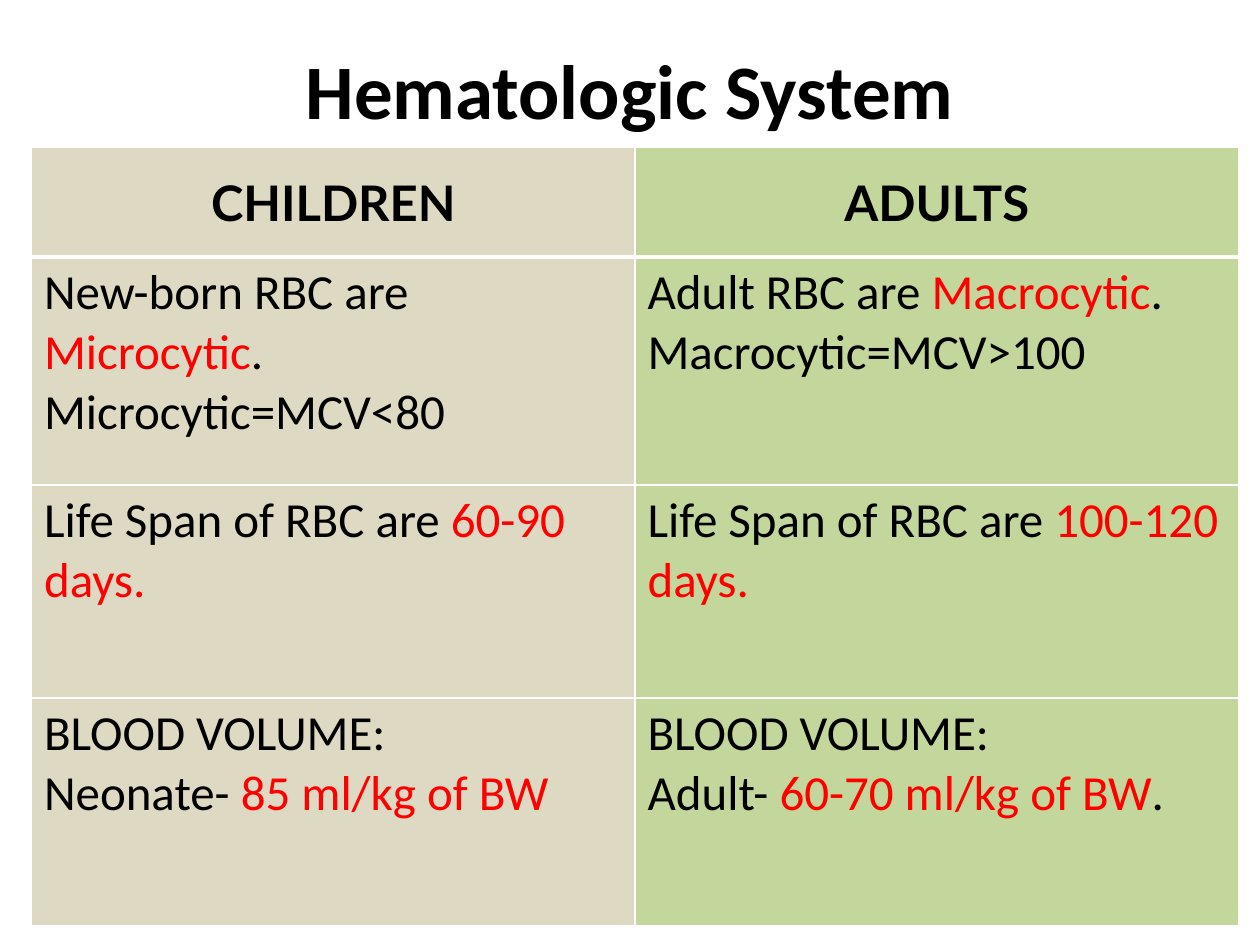
from lxml.etree import SubElement
from pptx import Presentation
from pptx.dml.color import RGBColor
from pptx.enum.text import MSO_ANCHOR as ANCHOR, PP_ALIGN as ALIGN
from pptx.oxml.ns import qn
from pptx.util import Inches, Pt

BLACK, RED, WHITE = "000000", "FF0000", "FFFFFF"
COLUMN_FILLS = ["DDD9C3", "C3D69B"]
TITLE = {"name": "Calibri", "size": Pt(44), "bold": True}
HEADER = {"name": "Lato", "size": Pt(28), "bold": True}
BODY = {"name": "Calibri", "size": Pt(28), "bold": False}


def rgb(value):
    return RGBColor.from_string(value)


def add_runs(p, runs, fmt):
    for text, color in runs:
        r = p.add_run()
        r.text = text
        for key, value in fmt.items():
            setattr(r.font, key, value)
        r.font.color.rgb = rgb(color)


prs = Presentation()
prs.slide_width, prs.slide_height = Inches(10), Inches(7.5)
s = prs.slides.add_slide(prs.slide_layouts[6])

# Title
tf = s.shapes.add_textbox(Inches(0.5), Inches(0.08), Inches(9), Inches(1.25)).text_frame
tf.word_wrap = True
tf.vertical_anchor = ANCHOR.MIDDLE
tf.paragraphs[0].alignment = ALIGN.CENTER
add_runs(tf.paragraphs[0], [("Hematologic System", BLACK)], TITLE)

# Table content: rows > cells > paragraphs > (text, colour) runs
rows = [
    [[[("CHILDREN", BLACK)]], [[("ADULTS", BLACK)]]],
    [[[("New-born RBC are ", BLACK), ("Microcytic", RED), (". Microcytic=MCV<80", BLACK)]],
     [[("Adult RBC are ", BLACK), ("Macrocytic", RED), (". Macrocytic=MCV>100", BLACK)]]],
    [[[("Life Span of RBC are ", BLACK), ("60-90 days.", RED)]],
     [[("Life Span of RBC are ", BLACK), ("100-120 days.", RED)]]],
    [[[("BLOOD VOLUME:", BLACK)],
      [("Neonate- ", BLACK), ("85 ml/kg of BW", RED)]],
     [[("BLOOD VOLUME:", BLACK)],
      [("Adult- ", BLACK), ("60-70 ml/kg of BW", RED), (".", BLACK)]]],
]
row_heights = [0.87, 1.81, 1.69, 1.81]

# Comparison table
table = s.shapes.add_table(len(rows), 2, Inches(0.25), Inches(1.17),
                           Inches(9.58), Inches(sum(row_heights))).table
for col in table.columns:
    col.width = Inches(4.79)

for i, (cells, height) in enumerate(zip(rows, row_heights)):
    table.rows[i].height = Inches(height)
    for j, paragraphs in enumerate(cells):
        cell = table.cell(i, j)
        tf = cell.text_frame
        for n, runs in enumerate(paragraphs):
            p = tf.add_paragraph() if n else tf.paragraphs[0]
            p.alignment = ALIGN.LEFT if i else ALIGN.CENTER
            add_runs(p, runs, BODY if i else HEADER)
        cell.vertical_anchor = ANCHOR.TOP if i else ANCHOR.MIDDLE

        # White borders, with a thicker rule below the header
        widths = {"L": 1, "R": 1, "T": 3 if i == 1 else 1, "B": 1 if i else 3}
        for side, width in widths.items():
            ln = SubElement(cell._tc.get_or_add_tcPr(), qn(f"a:ln{side}"), w=str(Pt(width)))
            SubElement(SubElement(ln, qn("a:solidFill")), qn("a:srgbClr"), val=WHITE)
        cell.fill.solid()
        cell.fill.fore_color.rgb = rgb(COLUMN_FILLS[j])

prs.save("out.pptx")
